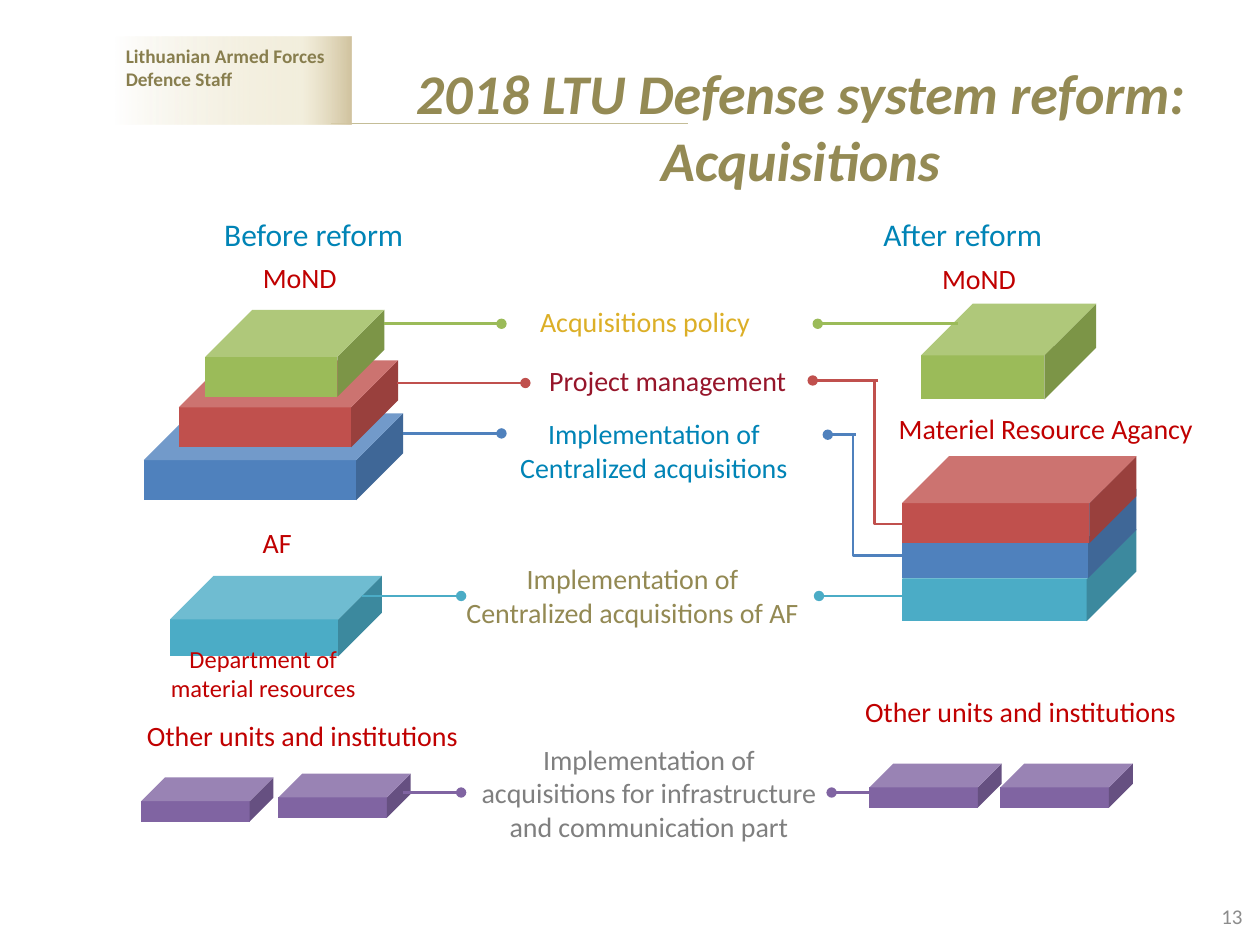
"""Build the slide comparing acquisitions before and after the defense system reform."""
from lxml.etree import SubElement
from pptx import Presentation
from pptx.dml.color import RGBColor
from pptx.enum.shapes import MSO_CONNECTOR as LINK, MSO_SHAPE as SHAPE
from pptx.enum.text import MSO_ANCHOR as ANCHOR, PP_ALIGN as ALIGN
from pptx.oxml.ns import qn
from pptx.util import Inches, Pt

COLORS = {
    "green": "9BBB59", "red": "C0504D", "blue": "4F81BD", "teal": "4BACC6",
    "purple": "8064A2", "heading": "0084B6", "owner": "C00000", "policy": "DCAF27",
    "project": "96152A", "forces": "938953", "infrastructure": "7F7F7F",
    "title": "948A54", "badge": "887E4E", "rule": "C4BD97", "number": "8C8C8C",
}
FONT = "Calibri"
TITLE = ["2018 LTU Defense system reform:", "Acquisitions"]
BADGE = ["Lithuanian Armed Forces", "Defence Staff"]
BADGE_STOPS = [(0, "FFFFFF", 100), (79, "E9E1C1", 54), (100, "D1C39F", 100)]

# Each label: text, centre x, top, width, height, size, color
LABELS = [
    ("Before reform", 2.49, 1.66, 1.82, 0.4, 18, "heading"),
    ("After reform", 7.64, 1.66, 1.82, 0.4, 18, "heading"),
    ("MoND", 2.38, 2.02, 1.96, 0.47, 16, "owner"),
    ("MoND", 7.77, 2.03, 1.96, 0.47, 16, "owner"),
    ("AF", 2.2, 4.12, 1.96, 0.47, 16, "owner"),
    ("Department of material resources", 2.09, 5.06, 1.96, 0.67, 14, "owner"),
    ("Materiel Resource Agancy", 8.3, 3.22, 2.68, 0.47, 16, "owner"),
    ("Other units and institutions", 2.4, 5.65, 3.5, 0.47, 16, "owner"),
    ("Other units and institutions", 8.1, 5.46, 3.03, 0.47, 16, "owner"),
    ("Acquisitions policy", 5.12, 2.37, 3.96, 0.37, 16, "policy"),
    ("Project management", 5.3, 2.84, 3.96, 0.37, 16, "project"),
    ("Implementation of Centralized acquisitions", 5.19, 3.26, 2.8, 0.64, 16, "heading"),
    ("Implementation of Centralized acquisitions of AF", 5.02, 4.41, 2.85, 0.64, 16, "forces"),
    ("Implementation of acquisitions for infrastructure and communication part",
     5.15, 5.84, 2.92, 0.91, 16, "infrastructure"),
]
BLOCKS = [
    ("teal", 1.35, 4.57, 1.68, 0.64),
    ("blue", 1.14, 3.28, 2.06, 0.69),
    ("red", 1.42, 2.86, 1.74, 0.69),
    ("green", 1.63, 2.46, 1.42, 0.69),
    ("green", 7.31, 2.41, 1.39, 0.76),
    ("teal", 7.16, 4.2, 1.86, 0.73),
    ("blue", 7.16, 3.88, 1.86, 0.71),
    ("red", 7.16, 3.62, 1.86, 0.69),
    ("purple", 2.21, 6.14, 1.05, 0.35),
    ("purple", 1.12, 6.17, 1.05, 0.35),
    ("purple", 6.9, 6.06, 1.05, 0.35),
    ("purple", 7.94, 6.06, 1.05, 0.35),
]
POINTERS = [
    ("green", 3.05, 3.98, 2.57), ("green", 7.6, 6.49, 2.57),
    ("red", 3.15, 4.17, 3.04), ("red", 6.97, 6.45, 3.02),
    ("blue", 3.2, 3.98, 3.44), ("blue", 6.79, 6.57, 3.45),
    ("teal", 2.87, 3.66, 4.73), ("teal", 7.35, 6.5, 4.73),
    ("purple", 3.2, 3.66, 6.29), ("purple", 7.03, 6.6, 6.29),
]
ELBOWS = [("red", 6.94, 3.02, 7.16, 4.16), ("blue", 6.77, 3.45, 7.2, 4.41)]


def rgb(name):
    return RGBColor.from_string(COLORS[name])


def write(paragraph, text, size, color, align, bold=False, italic=False):
    paragraph.alignment = align
    run = paragraph.add_run()
    run.text = text
    font = run.font
    font.name, font.size, font.bold, font.italic = FONT, Pt(size), bold, italic
    font.color.rgb = rgb(color)


def add_box(slide, left, top, width, height):
    frame = slide.shapes.add_textbox(*map(Inches, (left, top, width, height))).text_frame
    frame.word_wrap = True
    return frame


def add_line(slide, color, ends, width=1.5, kind=LINK.STRAIGHT):
    line = slide.shapes.add_connector(kind, *map(Inches, ends))
    line.line.color.rgb = rgb(color)
    line.line.width = Pt(width)
    SubElement(line.element.spPr, qn("a:effectLst"))
    return line


def add_pointer(slide, color, start, end, y):
    pointer = add_line(slide, color, (start, y, end, y))
    outline = pointer.element.spPr.find(qn("a:ln"))
    SubElement(outline, qn("a:tailEnd"), type="oval")


def add_elbow(slide, color, left, top, right, bottom):
    x, y = (left + right) / 2, (top + bottom) / 2
    across, down = (right - left) / 2, (bottom - top) / 2
    ends = (x - down, y - across, x + down, y + across)
    properties = add_line(slide, color, ends, kind=LINK.ELBOW).element.spPr
    properties.find(qn("a:prstGeom")).set("prst", "bentConnector2")
    frame = properties.find(qn("a:xfrm"))
    frame.set("rot", "16200000")
    frame.set("flipH", "1")


def add_block(slide, color, *place):
    block = slide.shapes.add_shape(SHAPE.CUBE, *map(Inches, place))
    block.adjustments[0] = 0.54
    block.shadow.inherit = False
    block.fill.solid()
    block.fill.fore_color.rgb = rgb(color)
    block.line.fill.background()


def add_badge(slide):
    add_line(slide, "rule", (2.63, 0.98, 5.46, 0.98), 0.75)
    panel = slide.shapes.add_shape(SHAPE.RECTANGLE, *map(Inches, (0.92, 0.29, 1.87, 0.7)))
    panel.shadow.inherit = False
    panel.line.fill.background()
    panel.fill.gradient()
    panel.fill.gradient_angle = 0
    stops = panel.element.spPr.find(qn("a:gradFill")).find(qn("a:gsLst"))
    for stop in list(stops):
        stops.remove(stop)
    for position, color, opacity in BADGE_STOPS:
        stop = SubElement(stops, qn("a:gs"), pos=str(position * 1000))
        shade = SubElement(stop, qn("a:srgbClr"), val=color)
        SubElement(shade, qn("a:alpha"), val=str(opacity * 1000))
    frame = add_box(slide, 0.9, 0.3, 1.92, 0.47)
    for index, text in enumerate(BADGE):
        paragraph = frame.add_paragraph() if index else frame.paragraphs[0]
        write(paragraph, text, 11, "badge", ALIGN.LEFT, bold=True)


def add_title(slide):
    title = slide.shapes.title
    title.left, title.top, title.width, title.height = map(Inches, (2.87, 0.37, 6.97, 1.25))
    title.text_frame.vertical_anchor = ANCHOR.MIDDLE
    paragraph = title.text_frame.paragraphs[0]
    for index, text in enumerate(TITLE):
        if index:
            paragraph.add_line_break()
        write(paragraph, text, 32, "title", ALIGN.CENTER, bold=True, italic=True)


def main():
    deck = Presentation()
    deck.slide_width, deck.slide_height = Inches(10), Inches(7.5)
    slide = deck.slides.add_slide(deck.slide_layouts[5])
    add_badge(slide)
    add_title(slide)
    for block in BLOCKS:
        add_block(slide, *block)
    for pointer in POINTERS:
        add_pointer(slide, *pointer)
    for elbow in ELBOWS:
        add_elbow(slide, *elbow)
    for text, center, top, width, height, size, color in LABELS:
        frame = add_box(slide, center - width / 2, top, width, height)
        write(frame.paragraphs[0], text, size, color, ALIGN.CENTER)
    number = add_box(slide, 9.48, 7.14, 0.48, 0.26)
    number.vertical_anchor = ANCHOR.MIDDLE
    write(number.paragraphs[0], "13", 12, "number", ALIGN.RIGHT)
    deck.save("out.pptx")


if __name__ == "__main__":
    main()
